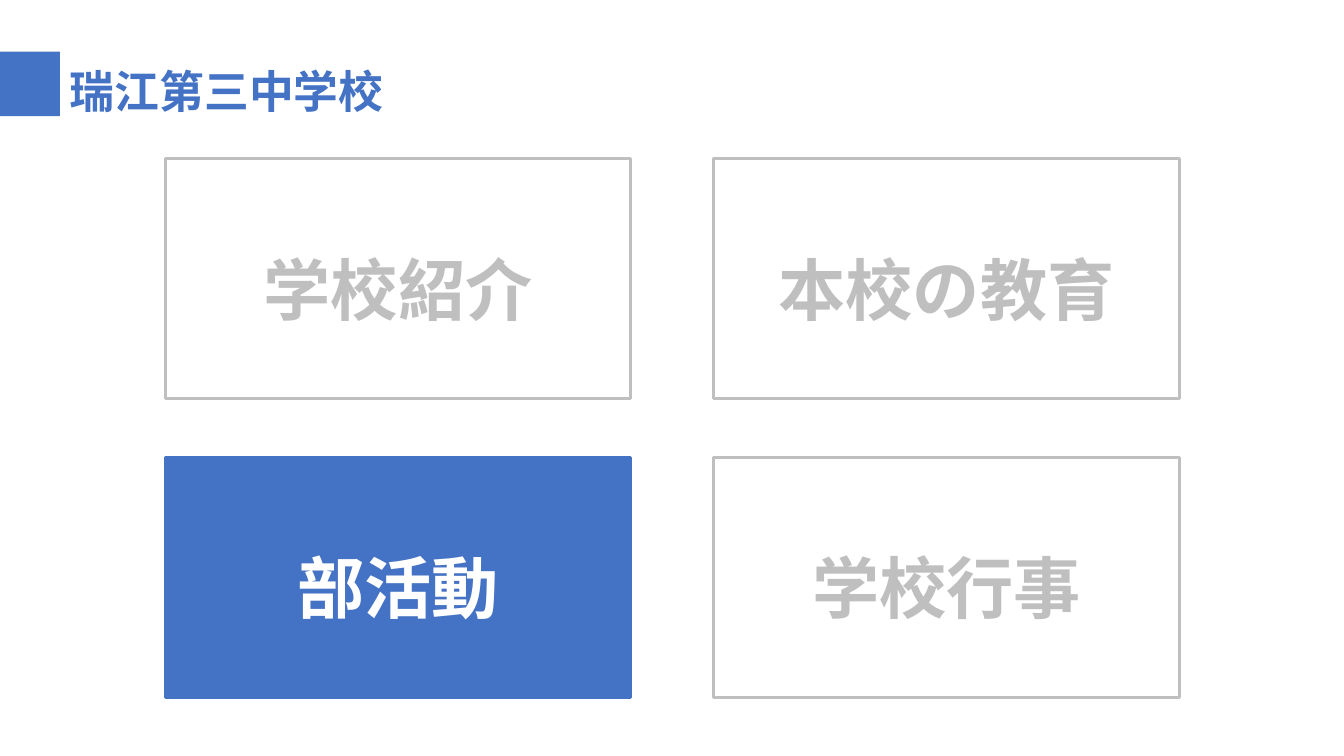
from lxml import etree
from pptx import Presentation
from pptx.dml.color import RGBColor
from pptx.enum.shapes import MSO_SHAPE
from pptx.enum.text import MSO_ANCHOR, MSO_AUTO_SIZE, PP_ALIGN
from pptx.oxml.ns import qn
from pptx.util import Cm, Pt

RECT = MSO_SHAPE.RECTANGLE
MIDDLE = MSO_ANCHOR.MIDDLE
GROW = MSO_AUTO_SIZE.SHAPE_TO_FIT_TEXT
LEFT, CENTER = PP_ALIGN.LEFT, PP_ALIGN.CENTER

FONT = "Noto Sans CJK JP"
BLUE, GRAY, WHITE = "4472C4", "BFBFBF", "FFFFFF"


def rgb(value):
    return RGBColor.from_string(value)


def write(tf, text, size=48, color=GRAY, align=LEFT):
    p = tf.paragraphs[0]
    p.alignment = align
    r = p.add_run()
    r.text = text
    r.font.name = FONT
    r.font.size = Pt(size)
    r.font.bold = True
    r.font.color.rgb = rgb(color)
    etree.SubElement(r.font._element, qn("a:ea"), typeface=FONT)


class Deck:
    """Builds the menu slide in one shared style."""

    def __init__(self):
        self.prs = Presentation()
        self.prs.slide_width = Cm(33.87)
        self.prs.slide_height = Cm(19.05)
        self.s = self.prs.slides.add_slide(self.prs.slide_layouts[6])

    def box(self, x, y, w, h, fill=None, line=None):
        sp = self.s.shapes.add_shape(RECT, Cm(x), Cm(y), Cm(w), Cm(h))
        sp.shadow.inherit = False
        if fill:
            sp.fill.solid()
            sp.fill.fore_color.rgb = rgb(fill)
        else:
            sp.fill.background()
        if line:
            sp.line.color.rgb = rgb(line)
            sp.line.width = Pt(2)
        else:
            sp.line.fill.background()
        return sp

    def title(self, text, x, y, w, h):
        sp = self.s.shapes.add_textbox(Cm(x), Cm(y), Cm(w), Cm(h))
        tf = sp.text_frame
        tf.word_wrap = False
        tf.auto_size = GROW
        write(tf, text, size=32, color=BLUE)

    def card(self, text, x, y, w, h, active=False):
        if active:
            sp = self.box(x, y, w, h, fill=BLUE, line=BLUE)
        else:
            sp = self.box(x, y, w, h, line=GRAY)
        tf = sp.text_frame
        tf.word_wrap = True
        tf.vertical_anchor = MIDDLE
        tf.margin_top, tf.margin_bottom = Cm(0.5), 0
        write(tf, text, color=WHITE if active else GRAY, align=CENTER)


def main():
    deck = Deck()
    deck.box(0, 1.3, 1.51, 1.63, fill=BLUE)
    deck.title("瑞江第三中学校", 1.51, 1.49, 8.48, 1.63)
    topics = ["学校紹介", "本校の教育", "部活動", "学校行事"]
    for i, topic in enumerate(topics):
        row, col = divmod(i, 2)
        deck.card(topic, 4.17 + col * 13.82, 4 + row * 7.52, 11.73, 6.05,
                  active=topic == "部活動")
    deck.prs.save("out.pptx")


if __name__ == "__main__":
    main()
